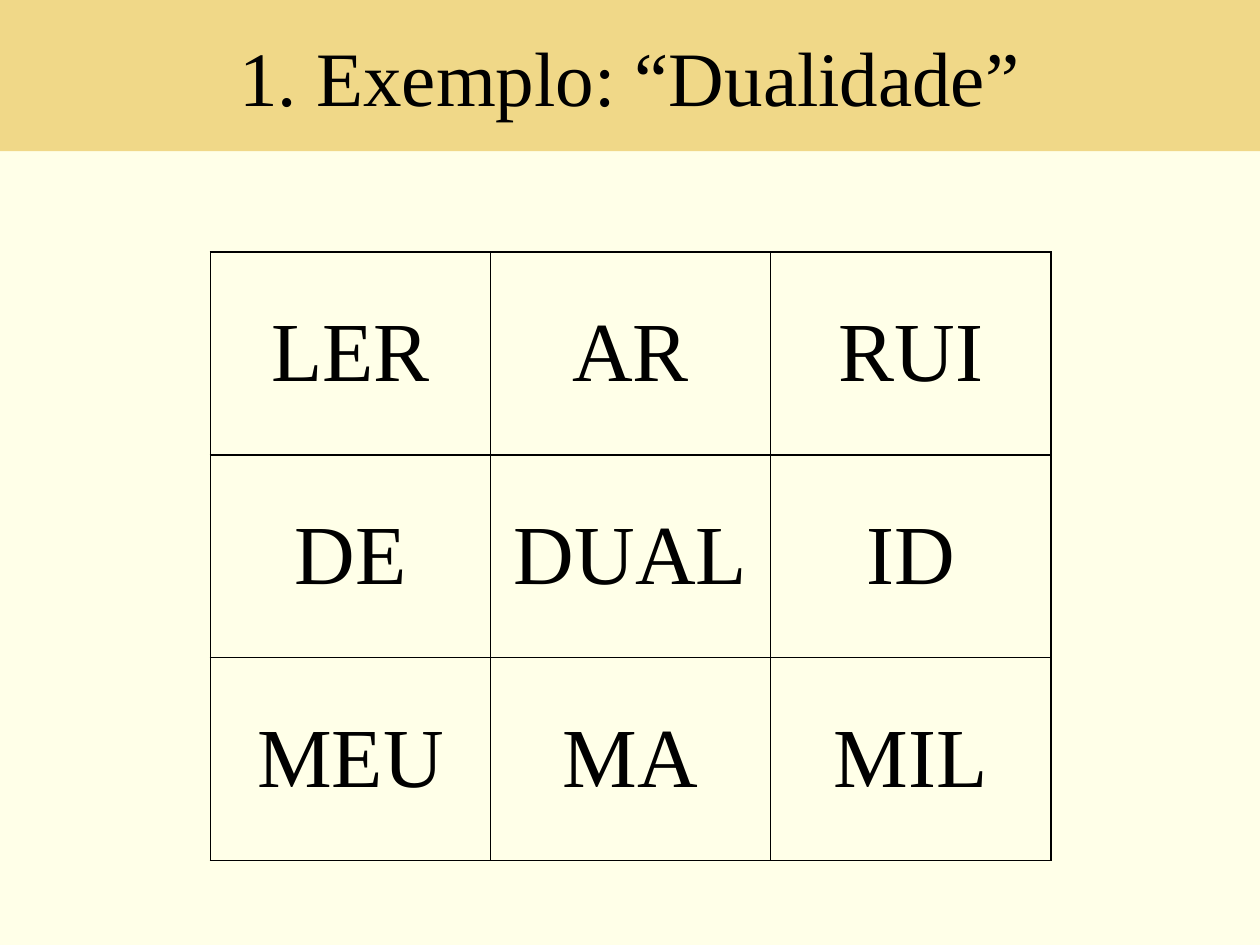
import pptx
import pptx.util
import pptx.dml.color
import pptx.enum.shapes
import pptx.enum.text
import pptx.oxml
import pptx.oxml.ns
from pptx.util import Inches

COLORS = {"page": "FFFFE8", "band": "F0D888", "ink": "000000"}
FONT = "Times New Roman"
SYLLABLES = [
    ["LER", "AR", "RUI"],
    ["DE", "DUAL", "ID"],
    ["MEU", "MA", "MIL"],
]


def rgb(name):
    return pptx.dml.color.RGBColor.from_string(COLORS[name])


def write_centered(frame, text, size):
    paragraph = frame.paragraphs[0]
    paragraph.alignment = pptx.enum.text.PP_ALIGN.CENTER
    run = paragraph.add_run()
    run.text = text
    run.font.name = FONT
    run.font.size = pptx.util.Pt(size)
    run.font.color.rgb = rgb("ink")


def add_title_band(slide, text):
    band = slide.shapes.add_shape(
        pptx.enum.shapes.MSO_SHAPE.RECTANGLE, 0, 0, Inches(10), Inches(1.2))
    band.shadow.inherit = False
    band.fill.solid()
    band.fill.fore_color.rgb = rgb("band")
    band.line.fill.background()
    band.text_frame.word_wrap = True
    band.text_frame.vertical_anchor = pptx.enum.text.MSO_ANCHOR.MIDDLE
    write_centered(band.text_frame, text, 44)


def outline_cell(cell, width_pt=1):
    properties = cell._tc.get_or_add_tcPr()
    for side in ("lnL", "lnR", "lnT", "lnB"):
        properties.append(pptx.oxml.parse_xml(
            f'<a:{side} {pptx.oxml.ns.nsdecls("a")} w="{pptx.util.Pt(width_pt)}">'
            f'<a:solidFill><a:srgbClr val="{COLORS["ink"]}"/></a:solidFill>'
            f'</a:{side}>'))


def add_syllable_grid(slide, rows):
    grid = slide.shapes.add_table(
        len(rows), len(rows[0]),
        Inches(1.67), Inches(2), Inches(6.67), Inches(4.83)).table
    grid.first_row = False
    grid.horz_banding = False
    for r, row in enumerate(rows):
        for c, syllable in enumerate(row):
            cell = grid.cell(r, c)
            outline_cell(cell)
            cell.fill.background()
            cell.vertical_anchor = pptx.enum.text.MSO_ANCHOR.MIDDLE
            write_centered(cell.text_frame, syllable, 48)


def main():
    deck = pptx.Presentation()
    deck.slide_width, deck.slide_height = Inches(10), Inches(7.5)
    slide = deck.slides.add_slide(deck.slide_layouts[6])

    # Page colour
    slide.background.fill.solid()
    slide.background.fill.fore_color.rgb = rgb("page")

    # Heading and grid of syllables
    add_title_band(slide, "1. Exemplo: “Dualidade”")
    add_syllable_grid(slide, SYLLABLES)

    deck.save("out.pptx")


if __name__ == "__main__":
    main()
